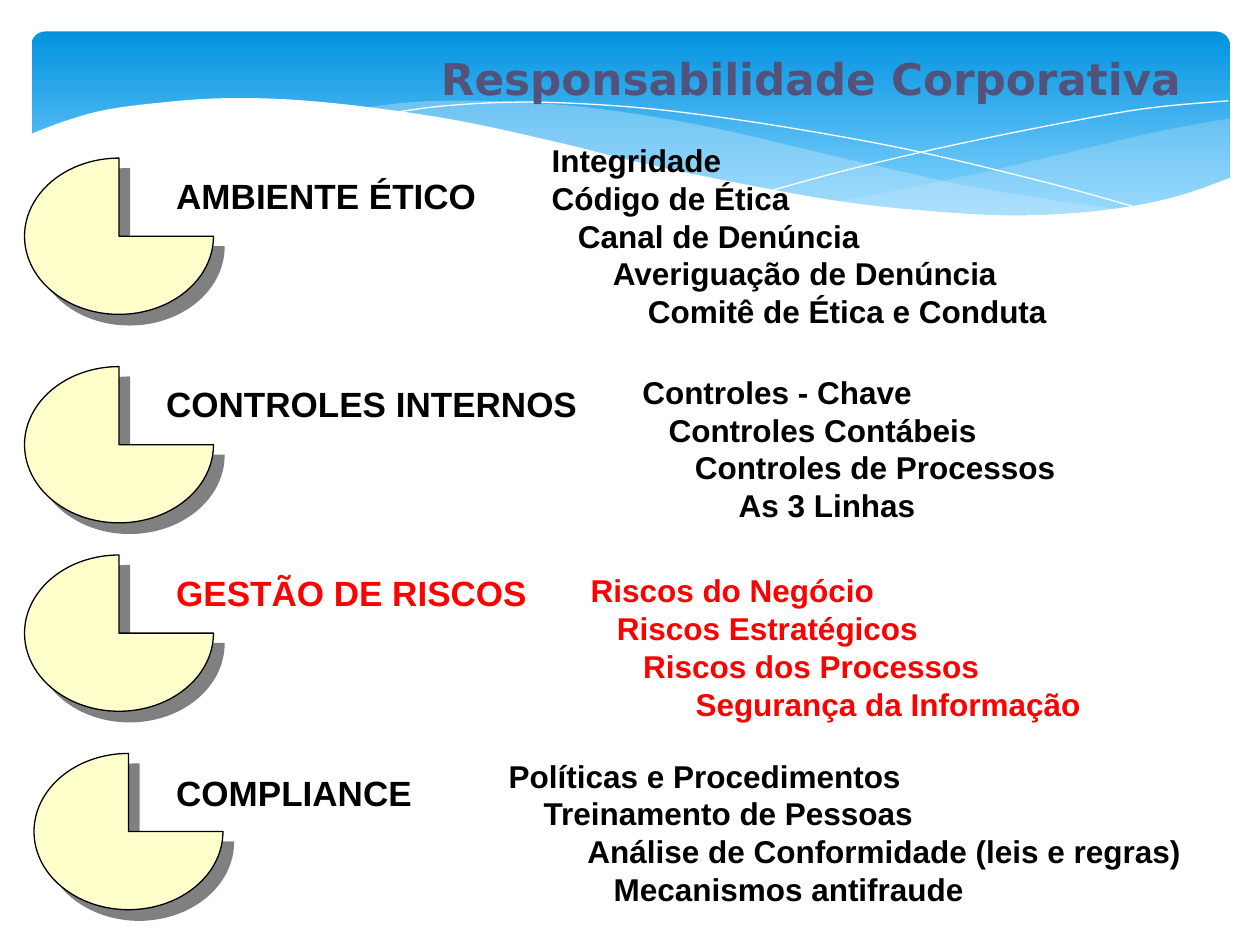
from dataclasses import dataclass

import pptx
import pptx.dml.color
import pptx.enum.shapes
import pptx.enum.text
import pptx.oxml
import pptx.oxml.ns
import pptx.util

# The slide is a grid of 100 columns by 75 rows
COLS, ROWS = 100, 75
CELL = pptx.util.Inches(0.1)
BLACK, RED, WHITE, PALE = "000000", "FF0000", "FFFFFF", "C6E7FC"
SPACE = 5  # points in one step of list indent
Point = tuple[float, float]


@dataclass
class Wave:
    edges: list[list[Point]]  # each edge is smooth, with corners between edges
    fill: str | None = None
    opacity: int = 100


@dataclass
class Section:
    pie: Point
    heading: str
    heading_box: tuple[float, float, float, float]
    list_box: tuple[float, float, float, float]
    items: list[tuple[int, str]]  # indent steps and wording
    color: str = BLACK


WAVES = [
    Wave([[(97.6, 9.4), (92.1, 10.4), (86.1, 11.8), (77.9, 13.7), (70.6, 15.2), (66.1, 16)],
          [(66.1, 16), (73.2, 16.8), (80.3, 17.2), (86.3, 17), (92.1, 16), (97.6, 14.1)]],
         PALE, 29),
    Wave([[(89.3, 16.7), (83.7, 15.9), (77.5, 14.9), (70.6, 13.4), (62.9, 11.6), (56.9, 10.2),
           (50.2, 9), (44.2, 8.3), (38, 8), (32.8, 8.1), (28.6, 8.6)],
          [(28.6, 8.6), (34.2, 9.4), (40.4, 10.6), (49.1, 12.6), (58.4, 14.6), (66.5, 16.1),
           (73.6, 16.9), (80.7, 17.3), (85.7, 17.1), (89.3, 16.7)]], PALE, 40),
    Wave([[(30.9, 9), (35.3, 8.4), (41.6, 8.1), (48.9, 8.4), (55.6, 9.1), (63.6, 10.3),
           (72.7, 12), (83.1, 14.5), (90.7, 16.6)]]),
    Wave([[(61.3, 15.1), (67.2, 13.5), (74.8, 11.7), (83.6, 9.9), (91, 8.6), (97.5, 8)]]),
    Wave([[(97.7, 14.1), (93, 15.7), (87.5, 16.7), (80.9, 17.1), (74.4, 16.8), (66.8, 16),
           (57.9, 14.4), (50.3, 12.8), (44.7, 11.4), (36.5, 9.6), (29.2, 8.5), (23, 7.9),
           (17.7, 7.8), (13.2, 8.1), (8.5, 8.7), (5.2, 9.6), (2.3, 10.7)],
          [(2.3, 10.7), (2.3, 22.4)], [(2.3, 22.4), (97.7, 22.4)]], WHITE),
]

SECTIONS = [
    Section((1.95, 12.55), "AMBIENTE ÉTICO", (13, 13.35, 26.5, 4.3), (42.8, 10.7, 43.7, 16.2),
            [(0, "Integridade"), (0, "Código de Ética"), (3, "Canal de Denúncia"),
             (7, "Averiguação de Denúncia"), (11, "Comitê de Ética e Conduta")]),
    Section((1.95, 29.1), "CONTROLES INTERNOS", (12.2, 29.9, 35.5, 4.3), (50, 29.1, 36.4, 16.2),
            [(0, "Controles - Chave"), (3, "Controles Contábeis"),
             (6, "Controles de Processos"), (11, "As 3 Linhas")]),
    Section((1.95, 44.05), "GESTÃO DE RISCOS", (13, 44.9, 31, 4.3), (44.5, 44.85, 42.7, 19.2),
            [(2, "Riscos do Negócio"), (5, "Riscos Estratégicos"),
             (8, "Riscos dos Processos"), (14, "Segurança da Informação")], RED),
    Section((2.7, 59.8), "COMPLIANCE", (13, 60.7, 22, 4.4), (38, 59.55, 57.2, 19.2),
            [(2, "Políticas e Procedimentos"), (6, "Treinamento de Pessoas"),
             (11, "Análise de Conformidade (leis e regras)"), (14, "Mecanismos antifraude")]),
]


def rgb(color: str) -> pptx.dml.color.RGBColor:
    return pptx.dml.color.RGBColor.from_string(color)


def grid(*cells: float) -> list[int]:
    return [round(c * CELL) for c in cells]


def smooth(pts: list[Point], steps: int = 5) -> list[Point]:
    """Catmull-Rom curve through the points; two points stay a straight line."""
    if len(pts) == 2:
        return pts
    ext = [pts[0], *pts, pts[-1]]
    curve = [pts[0]]
    for a, b, c, d in zip(ext, ext[1:], ext[2:], ext[3:]):
        for t in (i / steps for i in range(1, steps + 1)):
            curve.append(tuple(
                (2 * q + (r - p) * t + (2 * p - 5 * q + 4 * r - s) * t ** 2
                 + (3 * q - p - 3 * r + s) * t ** 3) / 2
                for p, q, r, s in zip(a, b, c, d)))
    return curve


def add_wave(shapes, wave: Wave) -> None:
    pts = [tuple(grid(*pt)) for edge in wave.edges for pt in smooth(edge)]
    fb = shapes.build_freeform(*pts[0])
    fb.add_line_segments(pts[1:], close=wave.fill is not None)
    sp = fb.convert_to_shape()
    sp.shadow.inherit = False
    if wave.fill is None:
        sp.fill.background()
        sp.line.color.rgb = rgb(WHITE)
        sp.line.width = pptx.util.Pt(0)
        return
    sp.fill.solid()
    sp.fill.fore_color.rgb = rgb(wave.fill)
    sp.line.fill.background()
    if wave.opacity < 100:
        clr = sp.fill._xPr.find(".//" + pptx.oxml.ns.qn("a:srgbClr"))
        clr.append(pptx.oxml.parse_xml(
            f'<a:alpha {pptx.oxml.ns.nsdecls("a")} val="{wave.opacity * 1000}"/>'))


def add_banner(shapes) -> None:
    sp = shapes.add_shape(pptx.enum.shapes.MSO_SHAPE.ROUNDED_RECTANGLE,
                          *grid(2.5, 2.5, 95.1, 15.6))
    sp.adjustments[0] = 0.07
    sp.shadow.inherit = False
    sp.line.fill.background()
    sp.fill.gradient()
    sp.fill.gradient_angle = 270
    for stop, pos, color in zip(sp.fill.gradient_stops, (0, 0.9), ("0293E0", "83D3FE")):
        stop.position = pos
        stop.color.rgb = rgb(color)


def add_pie(shapes, left: float, top: float) -> None:
    """Three-quarter pie with a hard grey shadow."""
    sp = shapes.add_shape(pptx.enum.shapes.MSO_SHAPE.PIE, *grid(left, top, 15, 12.4))
    sp.fill.solid()
    sp.fill.fore_color.rgb = rgb("FFFFCC")
    sp.line.color.rgb = rgb(BLACK)
    sp.line.width = pptx.util.Pt(0.75)
    sp.shadow.inherit = False
    effects = sp._element.spPr.find(pptx.oxml.ns.qn("a:effectLst"))
    effects.append(pptx.oxml.parse_xml(
        f'<a:outerShdw {pptx.oxml.ns.nsdecls("a")} dist="{pptx.util.Pt(8.5)}" dir="2700000" '
        'algn="ctr" rotWithShape="0"><a:srgbClr val="808080"/></a:outerShdw>'))


def add_text(shapes, box, lines: list[tuple[int, str]], *, size: float, color: str = BLACK,
             font: str = "Arial", align=None, anchor=None) -> None:
    tf = shapes.add_textbox(*grid(*box)).text_frame
    tf.word_wrap = True
    tf.vertical_anchor = anchor
    for i, (indent, text) in enumerate(lines):
        p = tf.add_paragraph() if i else tf.paragraphs[0]
        p.alignment = align
        if indent:
            p._p.get_or_add_pPr().set("marL", str(pptx.util.Pt(indent * SPACE)))
        r = p.add_run()
        r.text = text
        r.font.name, r.font.size, r.font.bold = font, pptx.util.Pt(size), True
        r.font.color.rgb = rgb(color)


def main() -> None:
    prs = pptx.Presentation()
    prs.slide_width, prs.slide_height = grid(COLS, ROWS)
    s = prs.slides.add_slide(prs.slide_layouts[6])

    # Banner with waves, and the title over it
    add_banner(s.shapes)
    for wave in WAVES:
        add_wave(s.shapes, wave)
    add_text(s.shapes, (23.4, 3.6, 81.9, 5.2), [(0, "Responsabilidade Corporativa")],
             size=25, color="52527A", font="DejaVu Sans",
             align=pptx.enum.text.PP_ALIGN.CENTER, anchor=pptx.enum.text.MSO_ANCHOR.MIDDLE)

    # Four pillars: pie, heading and stepped list
    for sec in SECTIONS:
        add_pie(s.shapes, *sec.pie)
        add_text(s.shapes, sec.heading_box, [(0, sec.heading)], size=20, color=sec.color)
        add_text(s.shapes, sec.list_box, sec.items, size=18, color=sec.color)

    prs.save("out.pptx")


if __name__ == "__main__":
    main()
